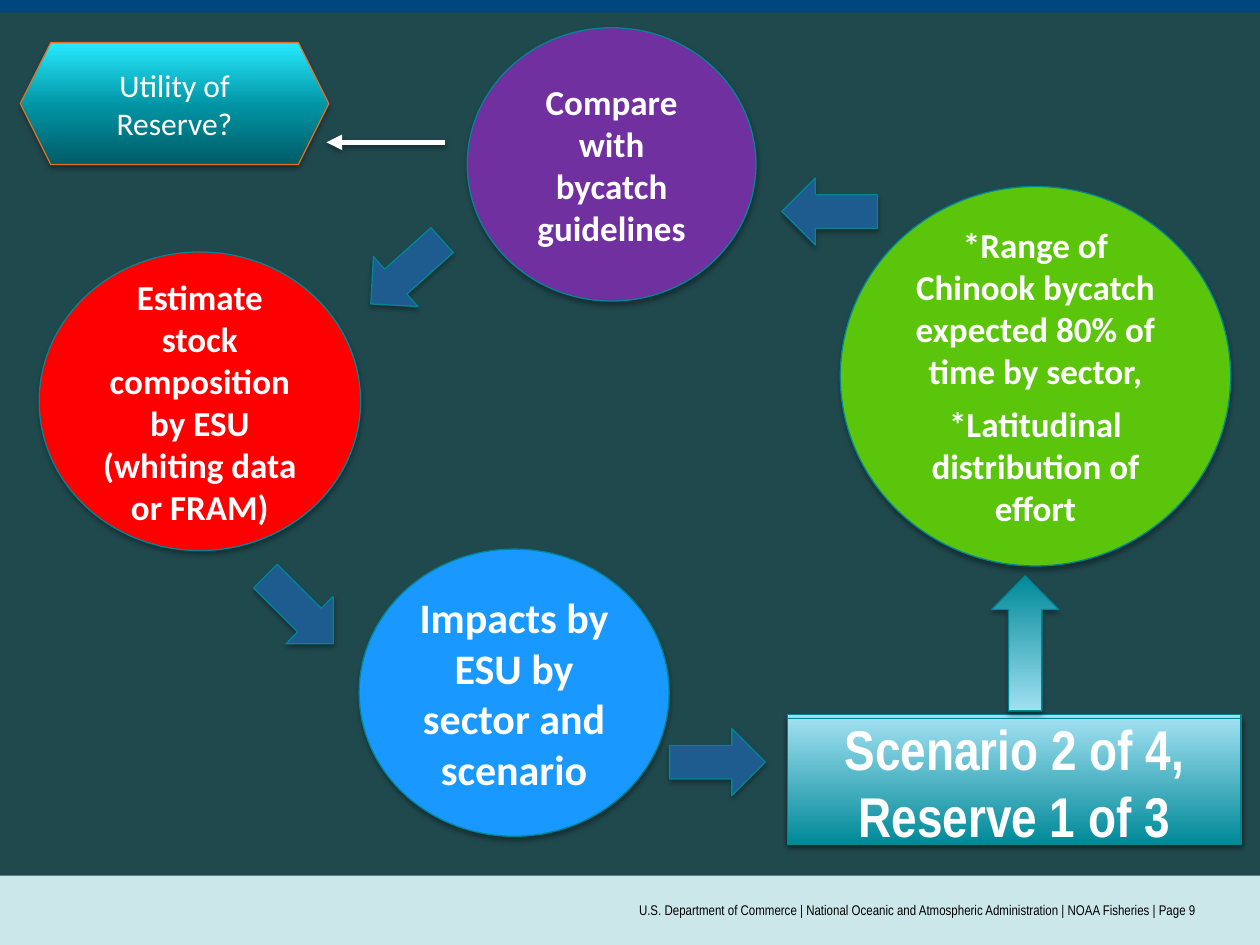
from lxml.etree import SubElement
from pptx import Presentation
from pptx.dml.color import RGBColor
from pptx.enum.shapes import MSO_CONNECTOR, MSO_SHAPE as SHAPE
from pptx.enum.text import MSO_ANCHOR, PP_ALIGN
from pptx.oxml.ns import qn
from pptx.util import Cm, Pt

COLORS = {
    "background": "20494E", "footer": "CCE7EA", "header": "00467F",
    "white": "FFFFFF", "black": "000000", "outline": "008695",
    "orange": "EA6D1F", "green": "5BC50B", "purple": "7030A0",
    "red": "FF0000", "blue": "1998FF", "arrow": "1E5C90",
    "teal_dark": "005C66", "teal_mid": "0093A3", "teal_bright": "28EAFF",
    "teal": "008998", "teal_pale": "A0E0F1",
}
TEAL_FADE = [(0, "teal"), (100, "teal_pale")]
RESERVE_FADE = [(0, "teal_dark"), (48, "teal_mid"), (100, "teal_bright")]


def rgb(name):
    return RGBColor.from_string(COLORS[name])


def add_color(parent, name):
    return SubElement(parent, qn("a:srgbClr"), val=COLORS[name])


def add_shadow(effects, alpha, dist):
    shadow = SubElement(effects, qn("a:outerShdw"), blurRad=str(Pt(3.1)),
                        dist=str(Pt(dist)), dir="5400000", rotWithShape="0")
    SubElement(add_color(shadow, "black"), qn("a:alpha"), val=str(alpha * 1000))


def fill_gradient(sp, stops):
    sp.fill.gradient()
    sp.fill.gradient_angle = 90
    stop_list = sp._element.spPr.find(qn("a:gradFill")).find(qn("a:gsLst"))
    for old in list(stop_list):
        stop_list.remove(old)
    for pos, name in stops:
        add_color(SubElement(stop_list, qn("a:gs"), pos=str(pos * 1000)), name)


def add_band(s, box, color):
    sp = s.shapes.add_shape(SHAPE.RECTANGLE, *map(Cm, box))
    sp.shadow.inherit = False
    sp.fill.solid()
    sp.fill.fore_color.rgb = rgb(color)
    sp.line.fill.background()


def add_node(s, kind, box, fill, line="outline", rotation=0):
    sp = s.shapes.add_shape(kind, *map(Cm, box))
    sp.rotation = rotation
    if isinstance(fill, list):
        fill_gradient(sp, fill)
    else:
        sp.fill.solid()
        sp.fill.fore_color.rgb = rgb(fill)
    sp.line.color.rgb = rgb(line)
    sp.line.width = Pt(0.75)
    sp.shadow.inherit = False
    add_shadow(sp._element.spPr.find(qn("a:effectLst")), 35, 1.8)
    return sp


def set_text(sp, text, size, bold=True, font="Calibri", color="white",
             align=PP_ALIGN.CENTER):
    tf = sp.text_frame
    tf.word_wrap = True
    tf.vertical_anchor = MSO_ANCHOR.MIDDLE
    tf.text = text
    for i, p in enumerate(tf.paragraphs):
        p.alignment = align
        if i:
            p.space_before = Pt(6)
        for r in p.runs:
            r.font.size = Pt(size)
            r.font.bold = bold
            r.font.name = font
            r.font.color.rgb = rgb(color)


def add_footer(s, left, top, width, height):
    add_band(s, (left, top, width, height), "footer")
    tb = s.shapes.add_textbox(Cm(left + 6.35), Cm(top), Cm(17.78), Cm(height))
    tb.text_frame.margin_left = tb.text_frame.margin_right = 0
    set_text(tb, "U.S. Department of Commerce | National Oceanic and Atmospheric "
             "Administration | NOAA Fisheries | Page 9",
             8, False, "Arial Narrow", "black", PP_ALIGN.RIGHT)


def add_reserve(s, left, top, width, height):
    sp = add_node(s, SHAPE.HEXAGON, (left, top, width, height), RESERVE_FADE, "orange")
    set_text(sp, "Utility of Reserve?", 18, False)
    y = Cm(top + 2.01)
    cx = s.shapes.add_connector(MSO_CONNECTOR.STRAIGHT, Cm(left + 8.56), y,
                                Cm(left + 6.17), y)
    cx.line.color.rgb = rgb("white")
    cx.line.width = Pt(3)
    SubElement(cx.line._get_or_add_ln(), qn("a:tailEnd"), type="triangle")
    add_shadow(SubElement(cx._element.spPr, qn("a:effectLst")), 38, 1.6)


def add_scenario(s, left, top, width, height):
    add_node(s, SHAPE.RECTANGLE, (left, top, width, height), TEAL_FADE)
    add_node(s, SHAPE.DOWN_ARROW, (left + 4.11, top - 2.79, 1.35, 2.72),
             TEAL_FADE, rotation=180)
    front = add_node(s, SHAPE.RECTANGLE, (left, top + 0.08, width, height), TEAL_FADE)
    set_text(front, "Scenario 2 of 4, Reserve 1 of 3", 32, font="Arial Narrow")


def add_cycle(s, left, top):
    steps = [
        (16.15, 3.2, 7.87, 7.65, "green", 20,
         "*Range of Chinook bycatch expected 80% of time by sector,\n"
         "*Latitudinal distribution of effort"),
        (8.63, 0, 5.82, 5.51, "purple", 20, "Compare with bycatch guidelines"),
        (0, 4.52, 6.48, 6.02, "red", 20,
         "Estimate stock composition by ESU (whiting data or FRAM)"),
        (6.45, 10.51, 6.25, 5.79, "blue", 24,
         "Impacts by ESU by sector and scenario"),
    ]
    for x, y, w, h, color, size, text in steps:
        sp = add_node(s, SHAPE.OVAL, (left + x, top + y, w, h), color)
        set_text(sp, text, size)
    arrows = [(13, 13.84, 270), (15.26, 2.74, 90), (6.73, 3.96, 48.2),
              (4.57, 10.77, 314.9)]
    for x, y, rotation in arrows:
        add_node(s, SHAPE.DOWN_ARROW, (left + x, top + y, 1.35, 1.93),
                 "arrow", rotation=rotation)


def main():
    prs = Presentation()
    prs.slide_width, prs.slide_height = Cm(25.4), Cm(19.05)
    s = prs.slides.add_slide(prs.slide_layouts[6])
    s.background.fill.solid()
    s.background.fill.fore_color.rgb = rgb("background")
    add_footer(s, 0, 17.65, 25.4, 1.4)
    add_band(s, (0, 0, 25.4, 0.25), "header")
    add_reserve(s, 0.41, 0.86, 6.22, 2.46)
    add_cycle(s, 0.79, 0.56)
    add_scenario(s, 15.88, 14.4, 9.14, 2.54)
    prs.save("out.pptx")


if __name__ == "__main__":
    main()
